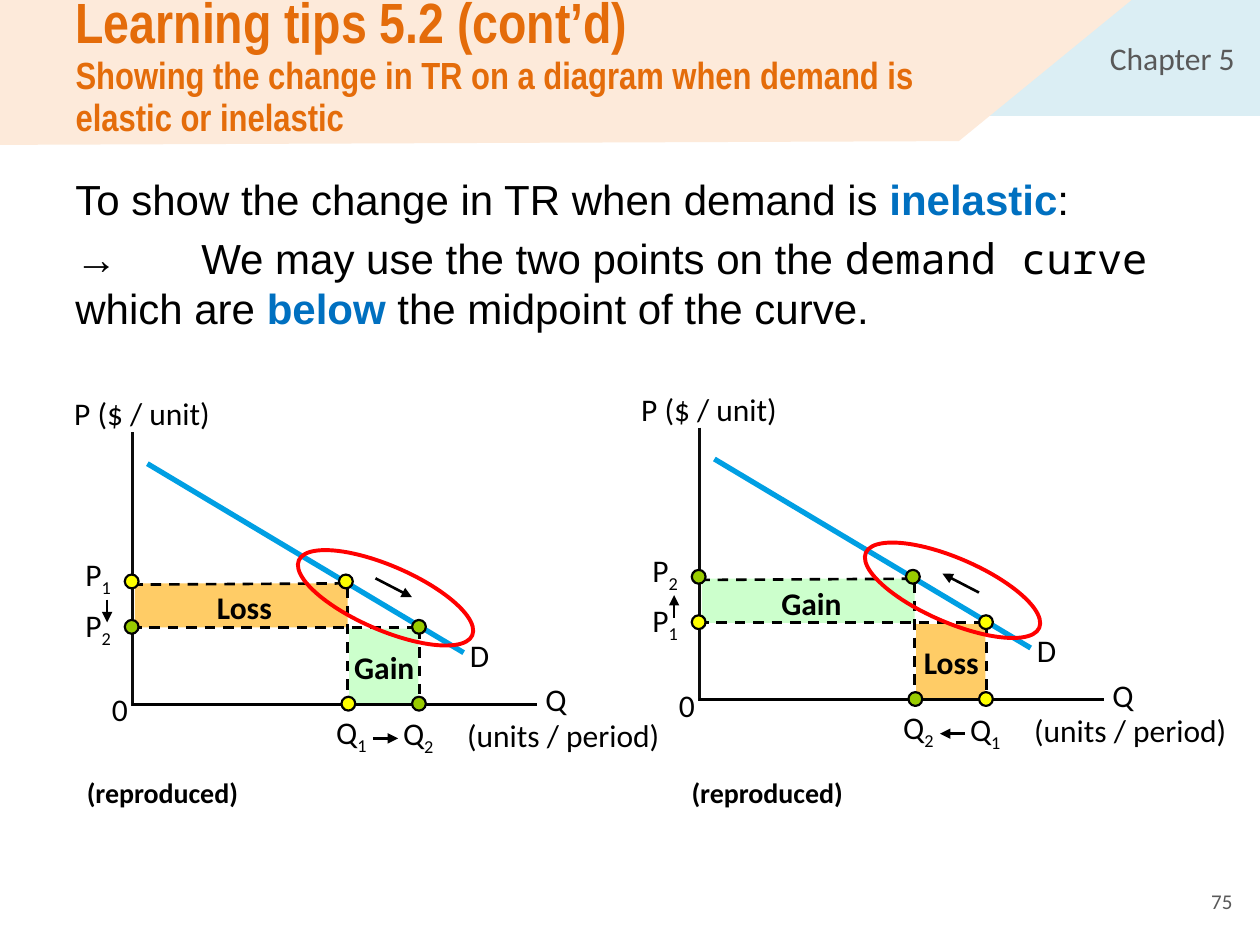
from dataclasses import dataclass
from typing import Any, NamedTuple

from lxml import etree
from pptx import Presentation
from pptx import util as u
from pptx.dml.color import RGBColor
from pptx.enum import dml, shapes, text
from pptx.oxml import ns

# The slide is a grid of 100 columns by 75 rows
WIDE, HIGH = u.Inches(10), u.Inches(7.5)
CELL = WIDE / 100


@dataclass(frozen=True)
class Theme:
    ink: str = "000000"
    axis: str = "0D0D0D"
    grey: str = "595959"
    title: str = "E46C0A"
    peach: str = "FDEADA"
    sky: str = "DBEEF4"
    key: str = "0070C0"
    curve: str = "009FE3"
    ring: str = "FF0000"
    loss: str = "FFCC66"
    gain: str = "CCFFCC"
    old: str = "FFFF00"
    new: str = "99CC00"
    font: str = "Calibri"
    head: float = 32.4
    sub: float = 21.6
    body: float = 24
    label: float = 18
    note: float = 16
    page: float = 12


class Box(NamedTuple):
    x: float
    y: float
    w: float
    h: float


class Run(NamedTuple):
    words: str
    size: float = 18
    color: str = "000000"
    bold: bool = False
    face: str = "Calibri"
    low: bool = False


@dataclass(frozen=True)
class Plot:
    dx: float
    dy: float
    rise: bool
    ring: Box
    note: Box


T = Theme()
PLOTS = [
    Plot(0, 0, False, Box(23.1, 44.9, 15, 5.1), Box(5.9, 61.1, 26.1, 3.7)),
    Plot(45, -0.37, True, Box(68.1, 44.3, 15, 5.1), Box(53.9, 61.1, 26.1, 3.7)),
]


def at(n: float) -> u.Emu:
    return u.Emu(round(n * CELL))


def put(item: Any, vals: dict[str, Any]) -> None:
    for name, val in vals.items():
        setattr(item, name, val)


def write(par: Any, runs: list[Run]) -> None:
    for run in runs:
        part = par.add_run()
        part.text = run.words
        put(part.font, {"size": u.Pt(run.size), "bold": run.bold, "name": run.face})
        part.font.color.rgb = RGBColor.from_string(run.color)
        if run.low:
            part.font._element.set("baseline", "-25000")


def label(parent: Any, box: Box, runs: list[Run], align: Any = None,
          anchor: Any = text.MSO_ANCHOR.TOP) -> Any:
    frame = parent.add_textbox(*map(at, box)).text_frame
    put(frame, {"word_wrap": True, "vertical_anchor": anchor})
    frame.paragraphs[0].alignment = align
    write(frame.paragraphs[0], runs)
    return frame


def style(shape: Any, fill: str | None, line: str | None, width: float) -> None:
    shape.shadow.inherit = False
    if fill:
        shape.fill.solid()
        shape.fill.fore_color.rgb = RGBColor.from_string(fill)
    else:
        shape.fill.background()
    if line:
        shape.line.color.rgb = RGBColor.from_string(line)
        shape.line.width = u.Pt(width)
    else:
        shape.line.fill.background()


def block(parent: Any, kind: Any, box: Box, fill: str | None,
          line: str | None = None, width: float = 1.25) -> Any:
    shape = parent.add_shape(kind, *map(at, box))
    style(shape, fill, line, width)
    return shape


def rule(parent: Any, ends: tuple[float, ...], color: str = T.ink,
         width: float = 1.5, dash: bool = False, tip: str = "") -> None:
    line = parent.add_connector(shapes.MSO_CONNECTOR.STRAIGHT, *map(at, ends))
    line.line.color.rgb = RGBColor.from_string(color)
    line.line.width = u.Pt(width)
    if dash:
        line.line.dash_style = dml.MSO_LINE.DASH
    if tip:
        etree.SubElement(line.line._get_or_add_ln(), ns.qn(tip), type="triangle")
    etree.SubElement(line._element.spPr, ns.qn("a:effectLst"))


def graph(slide: Any, plot: Plot) -> None:
    group = slide.shapes.add_group_shape().shapes
    rect, oval = shapes.MSO_SHAPE.RECTANGLE, shapes.MSO_SHAPE.OVAL
    wide, tall = ("Gain", "Loss") if plot.rise else ("Loss", "Gain")
    left, right = "21" if plot.rise else "12"
    first, last = (T.new, T.old) if plot.rise else (T.old, T.new)
    tint = {"Gain": T.gain, "Loss": T.loss}
    tip = "a:headEnd" if plot.rise else "a:tailEnd"

    def move(x: float, y: float, w: float, h: float) -> Box:
        return Box(x + plot.dx, y + plot.dy, w, h)

    def span(x: float, y: float, x2: float, y2: float) -> tuple[float, ...]:
        return x + plot.dx, y + plot.dy, x2 + plot.dx, y2 + plot.dy

    # Revenue areas, curve and axes
    block(group, rect, move(10.7, 46.3, 16.9, 3.5), tint[wide])
    block(group, rect, move(27.7, 49.9, 5.5, 6), tint[tall])
    rule(group, span(11.7, 36.8, 36.8, 51.8), T.curve, 3)
    rule(group, span(10.5, 34.3, 10.5, 56), T.axis)
    rule(group, span(42.6, 55.9, 10.5, 55.9))

    # Axis and point labels
    for words, sub, x, y, w in [
        ("0", "", 7.9, 54.3, 5.8), ("Q", "", 42.3, 53.5, 4.9),
        ("P ($ / unit)", "", 4.9, 30.8, 13.9), ("D", "", 36.3, 50, 4.9),
        ("P", left, 5.8, 43.6, 6.1), ("P", right, 5.8, 47.6, 6.1),
        ("Q", left, 25.7, 56.1, 6.1), ("Q", right, 31, 56.2, 6.1),
        ("(units / period)", "", 36.1, 56.3, 17.6),
    ]:
        runs = [Run(words)] + ([Run(sub, low=True)] if sub else [])
        label(group, move(x, y, w, 4), runs)

    # Guides and arrows of change
    for ends in [(10.5, 46.4, 27.6, 46.3), (33.3, 49.9, 33.3, 55.8),
                 (10.4, 49.8, 33.3, 49.8), (27.6, 46.6, 27.6, 56.1)]:
        rule(group, span(*ends), dash=True)
    for ends in [(29.6, 58.6, 31.6, 58.6), (8.5, 47.6, 8.5, 49.4),
                 (29.8, 45.9, 32.7, 47.4)]:
        rule(group, span(*ends), tip=tip)

    # Points before and after
    for fill, spots in [(first, [(9.9, 45.6), (26.9, 45.6), (27.1, 55.3)]),
                        (last, [(9.9, 49.2), (32.7, 49.2), (32.7, 55.3)])]:
        for x, y in spots:
            block(group, oval, move(x, y, 1.1, 1.1), fill, T.ink)

    # Area names
    for words, box in [(wide, move(14.3, 46.2, 10.2, 4)),
                       (tall, move(26.4, 50.9, 8.2, 4))]:
        label(group, box, [Run(words, bold=True)], text.PP_ALIGN.CENTER)

    # Ring and note
    block(slide.shapes, oval, plot.ring, None, T.ring, 2.25).rotation = 23.4
    label(slide.shapes, plot.note, [Run("(reproduced)", T.note, bold=True)])


def header(slide: Any) -> None:
    tab = block(slide.shapes, shapes.MSO_SHAPE.RECTANGLE, Box(73.6, 0, 26.4, 9.2), T.sky)
    put(tab.text_frame, {"margin_right": at(2), "vertical_anchor": text.MSO_ANCHOR.MIDDLE})
    par = tab.text_frame.paragraphs[0]
    par.alignment = text.PP_ALIGN.RIGHT
    write(par, [Run("Chapter 5", T.label, T.grey)])
    pen = slide.shapes.build_freeform(0, 0)
    pen.add_line_segments([(at(x), at(y)) for x, y in
                           [(89.8, 0), (76.1, 11.2), (0, 11.5)]])
    style(pen.convert_to_shape(), T.peach, None, 0)

    # Title, brought in front of the band
    title = slide.shapes.title
    slide.shapes._spTree.append(title._element)
    put(title, dict(zip(("left", "top", "width", "height"), map(at, (5, 2.1, 71, 7.9)))))
    put(title.text_frame, {"auto_size": text.MSO_AUTO_SIZE.NONE, "word_wrap": True,
                           "vertical_anchor": text.MSO_ANCHOR.MIDDLE})
    par = title.text_frame.paragraphs[0]
    put(par, {"alignment": text.PP_ALIGN.LEFT, "line_spacing": u.Pt(24)})
    write(par, [Run("Learning tips 5.2 (cont’d)", T.head, T.title, True, "Arial Narrow")])
    etree.SubElement(par._p.add_br(), ns.qn("a:rPr"), sz=str(round(T.head * 100)))
    write(par, [Run("Showing the change in TR on a diagram when demand is elastic or inelastic",
                    T.sub, T.title, True, "Arial Narrow")])


def body(slide: Any) -> None:
    def say(words: str, key: bool = False, face: str = "Arial") -> Run:
        return Run(words, T.body, T.key if key else T.ink, key, face)

    frame = label(slide.shapes, Box(5, 13.3, 90, 13.9), [
        say("To show the change in TR when demand is "), say("inelastic", True), say(":")])
    par = frame.add_paragraph()
    par.space_before = u.Pt(4.8)
    tabs = etree.SubElement(par._p.get_or_add_pPr(), ns.qn("a:tabLst"))
    etree.SubElement(tabs, ns.qn("a:tab"), pos=str(at(10)), algn="l")
    write(par, [say("→\tWe may use the two points on the "),
                say("demand curve ", face="Noto Sans Mono"), say("which are "),
                say("below", True), say(" the midpoint of the curve.")])


def main() -> None:
    deck = Presentation()
    put(deck, {"slide_width": WIDE, "slide_height": HIGH})
    slide = deck.slides.add_slide(deck.slide_layouts[5])
    header(slide)
    body(slide)
    for plot in PLOTS:
        graph(slide, plot)
    label(slide.shapes, Box(75.5, 69.5, 23.3, 4), [Run("75", T.page, T.grey)],
          text.PP_ALIGN.RIGHT, text.MSO_ANCHOR.MIDDLE)
    deck.save("out.pptx")


if __name__ == "__main__":
    main()
